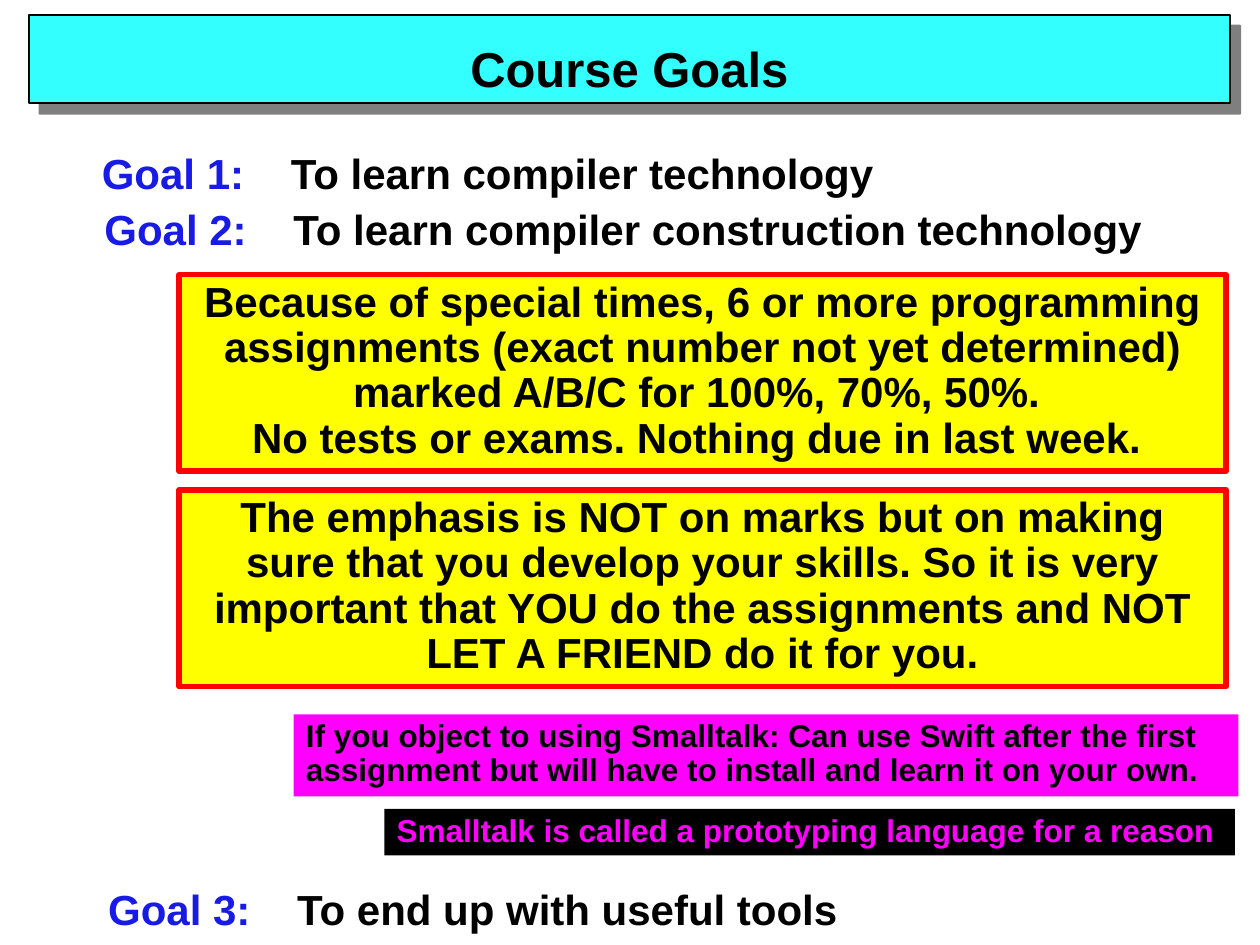
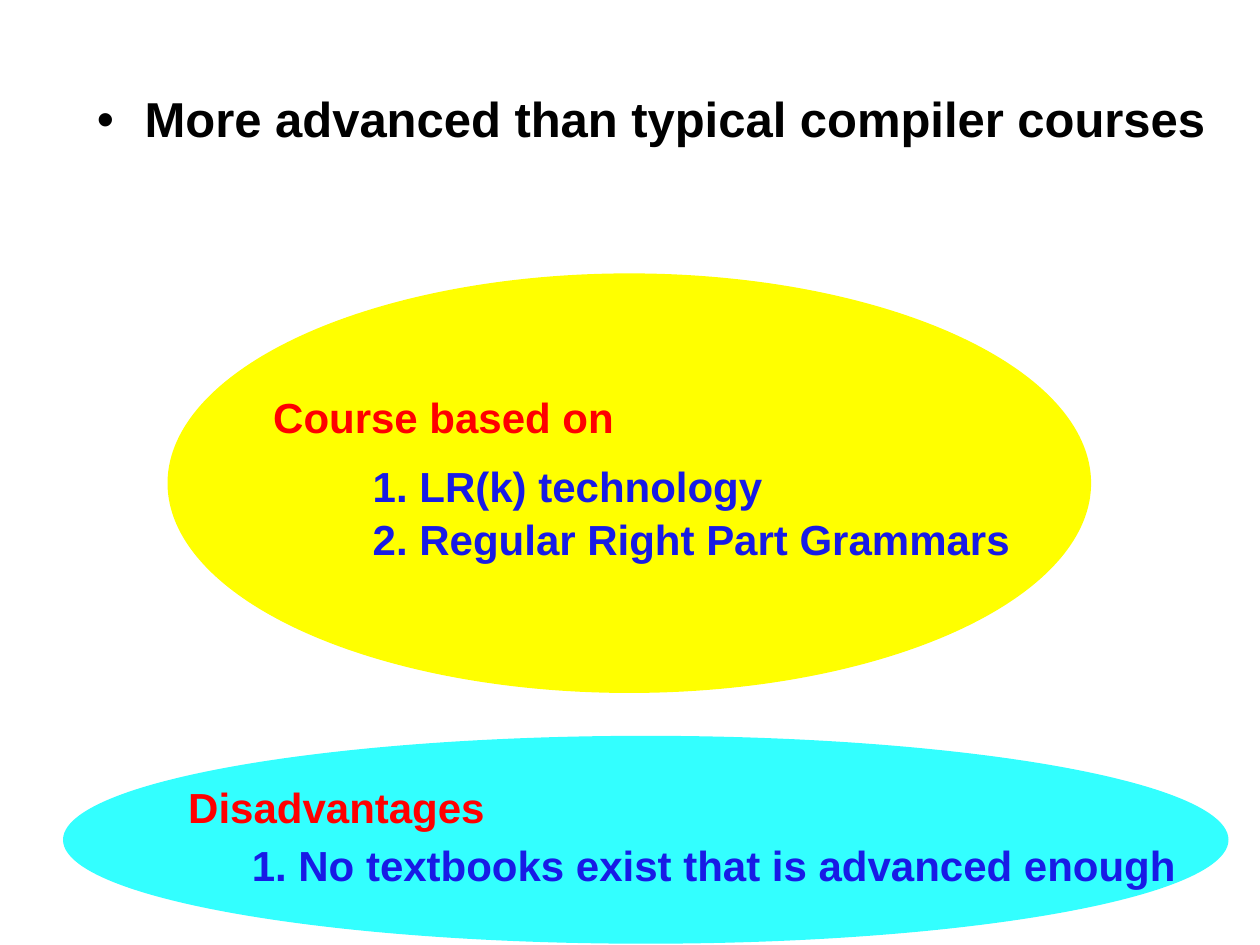
from dataclasses import dataclass

import lxml.etree
import pptx
import pptx.dml.color
import pptx.enum.shapes
import pptx.enum.text
import pptx.oxml.ns
import pptx.util
from pptx.presentation import Presentation
from pptx.shapes.autoshape import Shape
from pptx.slide import Slide

EMU_PER_PX = 9144  # 100 px to the inch
SHAPES = pptx.enum.shapes.MSO_SHAPE
ALIGN = pptx.enum.text.PP_ALIGN
ANCHOR = pptx.enum.text.MSO_ANCHOR


@dataclass(frozen=True)
class Theme:
    font: str = "Arial"
    black: str = "000000"
    blue: str = "181BE5"
    red: str = "FF0000"
    yellow: str = "FFFF00"
    cyan: str = "33FFFF"
    magenta: str = "FF00FF"
    heading: int = 28
    body: int = 24
    note: int = 18
    line_spacing: float = 0.9
    title_spacing: float = 1.3


THEME = Theme()


@dataclass(frozen=True)
class Box:
    left: int
    top: int
    width: int
    height: int

    def emu(self) -> list[pptx.util.Emu]:
        return [pptx.util.Emu(px * EMU_PER_PX)
                for px in (self.left, self.top, self.width, self.height)]


@dataclass(frozen=True)
class Goal:
    label: str
    aim: str
    box: Box


@dataclass(frozen=True)
class Panel:
    """A filled block with a message in it."""
    message: str
    box: Box
    fill: str
    ink: str = THEME.black
    size: int = THEME.note
    border: str | None = None
    align: ALIGN = ALIGN.LEFT
    wrap: bool = True


@dataclass(frozen=True)
class Label:
    message: str
    box: Box
    ink: str
    align: ALIGN = ALIGN.LEFT
    wrap: bool = False


GOALS = [
    Goal("Goal 1:", "To learn compiler technology", Box(71, 117, 821, 47)),
    Goal("Goal 2:", "To learn compiler construction technology", Box(73, 161, 905, 47)),
    Goal("Goal 3:", "To end up with useful tools", Box(76, 701, 905, 47)),
]

POLICIES = [
    "Because of special times, 6 or more programming assignments "
    "(exact number not yet determined)\n"
    "marked A/B/C for 100%, 70%, 50%. \n"
    "No tests or exams. Nothing due in last week. ",
    "The emphasis is NOT on marks but on making sure that you develop your skills. "
    "So it is very important that YOU do the assignments and NOT LET A FRIEND do it for you.",
]

PANELS = [
    Panel(policy, Box(142, 218 + 171 * row, 831, 156), THEME.yellow,
          size=THEME.body, border=THEME.red, align=ALIGN.CENTER)
    for row, policy in enumerate(POLICIES)
] + [
    Panel("If you object to using Smalltalk: Can use Swift after the first assignment "
          "but will have to install and learn it on your own.",
          Box(233, 567, 750, 65), THEME.magenta),
    Panel("Smalltalk is called a prototyping language for a reason",
          Box(305, 642, 675, 37), THEME.black, ink=THEME.magenta, wrap=False),
]

ELLIPSES = [
    (Box(133, 217, 733, 333), THEME.yellow),
    (Box(50, 584, 925, 165), THEME.cyan),
]

LABELS = [
    Label("Course based on", Box(207, 310, 293, 46), THEME.red),
    Label("1. LR(k) technology", Box(286, 365, 332, 46), THEME.blue),
    Label("2. Regular Right Part Grammars", Box(286, 407, 531, 46), THEME.blue),
    Label("Disadvantages", Box(133, 620, 268, 46), THEME.red, ALIGN.CENTER, True),
    Label("1. No textbooks exist that is advanced enough",
          Box(190, 666, 760, 46), THEME.blue),
]


def rgb(colour: str) -> pptx.dml.color.RGBColor:
    return pptx.dml.color.RGBColor.from_string(colour)


def write(shape: Shape, *parts: tuple[str, str], size: int = THEME.body,
          align: ALIGN = ALIGN.LEFT, anchor: ANCHOR = ANCHOR.TOP,
          spacing: float = THEME.line_spacing, wrap: bool = True) -> None:
    """Fill the shape with one paragraph made of (text, colour) parts."""
    frame = shape.text_frame
    frame.word_wrap = wrap
    frame.vertical_anchor = anchor
    paragraph = frame.paragraphs[0]
    paragraph.alignment = align
    paragraph.line_spacing = spacing
    for text, colour in parts:
        for number, line in enumerate(text.split("\n")):
            if number:
                paragraph.add_line_break()
            run = paragraph.add_run()
            run.text = line
            run.font.name = THEME.font
            run.font.size = pptx.util.Pt(size)
            run.font.bold = True
            run.font.color.rgb = rgb(colour)


def add_block(slide: Slide, kind: SHAPES, box: Box, fill: str,
              border: str | None = None, border_width: int = 3) -> Shape:
    block = slide.shapes.add_shape(kind, *box.emu())
    block.shadow.inherit = False
    block.fill.solid()
    block.fill.fore_color.rgb = rgb(fill)
    if border:
        block.line.color.rgb = rgb(border)
        block.line.width = pptx.util.Pt(border_width)
    else:
        block.line.fill.background()
    return block


def add_text(slide: Slide, box: Box) -> Shape:
    return slide.shapes.add_textbox(*box.emu())


def cast_shadow(shape: Shape) -> None:
    """Drop a half-transparent black shadow to the lower right."""
    qn = pptx.oxml.ns.qn
    effects = shape._element.spPr.find(qn("a:effectLst"))
    shadow = lxml.etree.SubElement(
        effects, qn("a:outerShdw"), dist=str(pptx.util.Pt(8.5)),
        dir=str(45 * 60000), algn="ctr", rotWithShape="0")
    colour = lxml.etree.SubElement(shadow, qn("a:srgbClr"), val=THEME.black)
    lxml.etree.SubElement(colour, qn("a:alpha"), val="50000")


def add_bullet(shape: Shape, indent: int) -> None:
    qn = pptx.oxml.ns.qn
    properties = shape.text_frame.paragraphs[0]._p.get_or_add_pPr()
    properties.set("marL", str(indent * EMU_PER_PX))
    properties.set("indent", str(-indent * EMU_PER_PX))
    colour = lxml.etree.SubElement(properties, qn("a:buClr"))
    lxml.etree.SubElement(colour, qn("a:srgbClr"), val=THEME.black)
    lxml.etree.SubElement(properties, qn("a:buFont"), typeface=THEME.font)
    lxml.etree.SubElement(properties, qn("a:buChar"), char="•")


def add_title(slide: Slide, title: str) -> None:
    band = add_block(slide, SHAPES.ROUNDED_RECTANGLE, Box(23, 12, 953, 70),
                     THEME.cyan, THEME.black, border_width=1)
    band.adjustments[0] = 0
    cast_shadow(band)
    write(band, (title, THEME.black), size=THEME.heading, align=ALIGN.CENTER,
          anchor=ANCHOR.MIDDLE, spacing=THEME.title_spacing)


def add_blank_slide(deck: Presentation) -> Slide:
    return deck.slides.add_slide(deck.slide_layouts[6])


def build_goals(deck: Presentation) -> None:
    slide = add_blank_slide(deck)
    add_title(slide, "Course Goals")
    for goal in GOALS:
        write(add_text(slide, goal.box),
              (goal.label, THEME.blue), ("\t" + goal.aim, THEME.black))
    for panel in PANELS:
        block = add_block(slide, SHAPES.RECTANGLE, panel.box, panel.fill, panel.border)
        write(block, (panel.message, panel.ink), size=panel.size,
              align=panel.align, wrap=panel.wrap)


def build_approach(deck: Presentation) -> None:
    slide = add_blank_slide(deck)
    for box, fill in ELLIPSES:
        add_block(slide, SHAPES.OVAL, box, fill)
    for label in LABELS:
        write(add_text(slide, label.box), (label.message, label.ink),
              align=label.align, wrap=label.wrap)
    claim = add_text(slide, Box(67, 71, 911, 53))
    write(claim, ("More advanced than typical compiler courses", THEME.black),
          size=THEME.heading, wrap=False)
    add_bullet(claim, indent=38)


def main() -> None:
    deck = pptx.Presentation()
    deck.slide_width = pptx.util.Emu(1000 * EMU_PER_PX)
    deck.slide_height = pptx.util.Emu(750 * EMU_PER_PX)
    build_goals(deck)
    build_approach(deck)
    deck.save("out.pptx")


if __name__ == "__main__":
    main()
